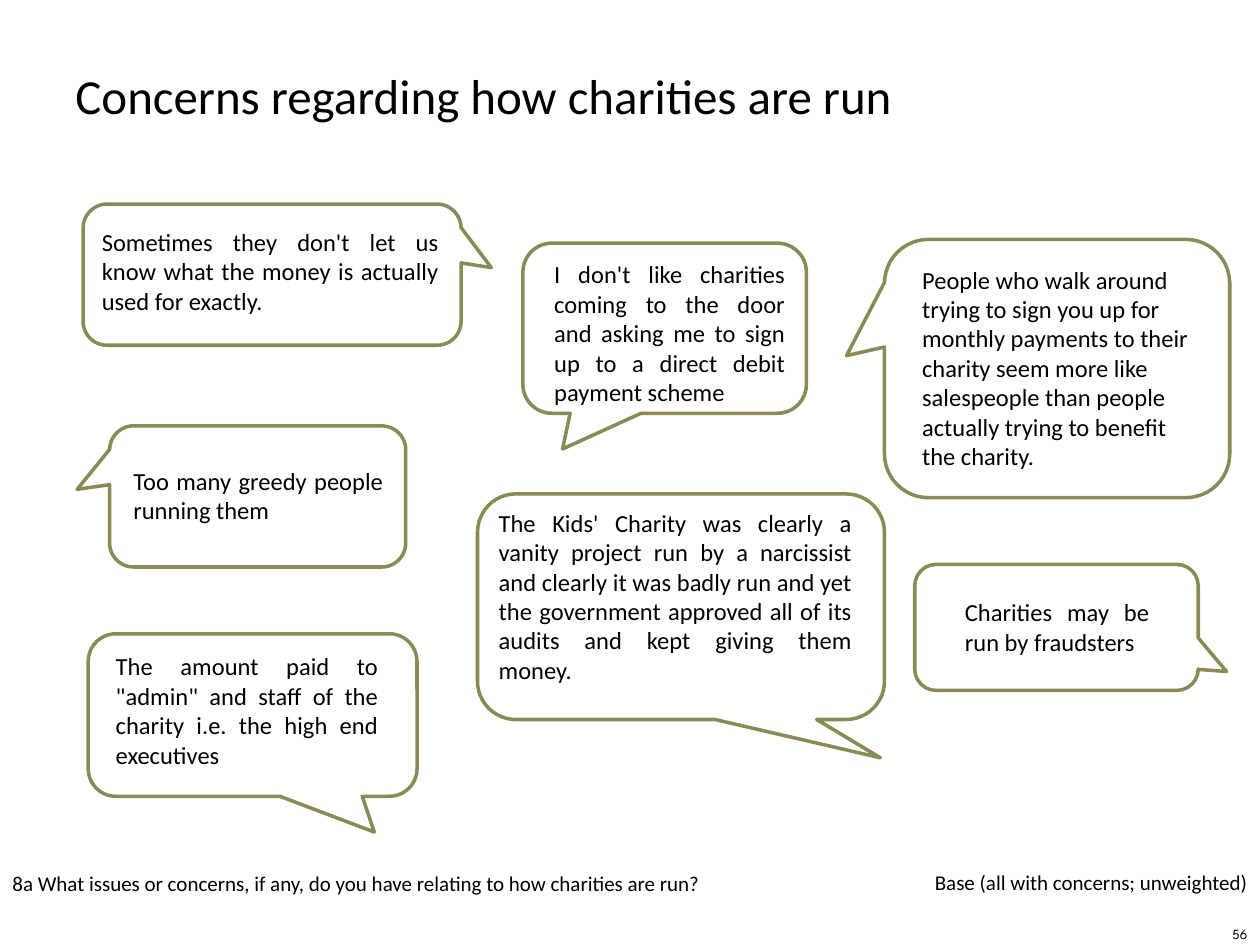
from pptx import Presentation
from pptx.dml.color import RGBColor
from pptx.enum.shapes import MSO_SHAPE
from pptx.enum.text import MSO_ANCHOR, PP_ALIGN
from pptx.util import Inches, Pt

CALLOUT = MSO_SHAPE.ROUNDED_RECTANGULAR_CALLOUT
LEFT, RIGHT, JUSTIFY = PP_ALIGN.LEFT, PP_ALIGN.RIGHT, PP_ALIGN.JUSTIFY
TOP, MIDDLE = MSO_ANCHOR.TOP, MSO_ANCHOR.MIDDLE
OLIVE, BLACK = "898A56", "000000"
CORNER = 0.17

# bubble box, pointer offset, text box, alignment, quote
QUOTES = [
    ((0.66, 1.62, 3, 1.12), (0.58, -0.05), (0.71, 1.75, 2.87, 0.81), JUSTIFY,
     "Sometimes they don't let us know what the money is actually used for exactly."),
    ((0.7, 5.03, 2.61, 1.29), (0.37, 0.72), (0.82, 5.12, 2.28, 1.04), JUSTIFY,
     "The amount paid to \"admin\" and staff of the charity i.e. the high end executives"),
    ((3.79, 3.92, 3.23, 1.79), (0.49, 0.67), (3.86, 3.98, 3, 1.51), JUSTIFY,
     "The Kids' Charity was clearly a vanity project run by a narcissist and clearly "
     "it was badly run and yet the government approved all of its audits and kept "
     "giving them money."),
    ((0.87, 3.38, 2.35, 1.12), (-0.61, -0.05), (0.96, 3.65, 2.18, 0.57), JUSTIFY,
     "Too many greedy people running them"),
    ((7.02, 1.9, 2.74, 2.05), (-0.61, -0.05), (7.22, 2.05, 2.41, 1.75), LEFT,
     "People who walk around trying to sign you up for monthly payments to their "
     "charity seem more like salespeople than people actually trying to benefit "
     "the charity."),
    ((4.15, 1.93, 2.25, 1.35), (-0.36, 0.71), (4.3, 2.01, 2.03, 1.28), JUSTIFY,
     "I don't like charities coming to the door and asking me to sign up to a "
     "direct debit payment scheme"),
    ((7.26, 4.48, 2.25, 1), (0.6, 0.35), (7.56, 4.69, 1.66, 0.57), JUSTIFY,
     "Charities may be run by fraudsters"),
]

# box, text, size, alignment, anchor, font
LABELS = [
    ((0.5, 0.13, 7.31, 1.25), "Concerns regarding how charities are run",
     28, LEFT, MIDDLE, "Calibri"),
    ((0, 6.86, 7.09, 0.3),
     "8a What issues or concerns, if any, do you have relating to how charities are run?",
     12, LEFT, TOP, "Calibri"),
    ((1.49, 6.85, 8.51, 0.3), "Base (all with concerns; unweighted)",
     12, RIGHT, TOP, "Calibri"),
    ((7.67, 7.21, 2.33, 0.4), "56", 8, RIGHT, MIDDLE, "League Spartan"),
]


def rgb(value):
    return RGBColor.from_string(value)


def add_bubble(s, box, pointer):
    sp = s.shapes.add_shape(CALLOUT, *map(Inches, box))
    sp.shadow.inherit = False
    sp.fill.background()
    sp.line.color.rgb = rgb(OLIVE)
    sp.line.width = Pt(2)
    for i, value in enumerate((*pointer, CORNER)):
        sp.adjustments[i] = value


def add_text(s, box, text, size, align, anchor=TOP, font="Calibri"):
    tf = s.shapes.add_textbox(*map(Inches, box)).text_frame
    tf.word_wrap = True
    tf.vertical_anchor = anchor
    p = tf.paragraphs[0]
    p.text = text
    p.alignment = align
    p.font.name = font
    p.font.size = Pt(size)
    p.font.color.rgb = rgb(BLACK)


def main():
    prs = Presentation()
    prs.slide_width, prs.slide_height = Inches(10), Inches(7.5)
    s = prs.slides.add_slide(prs.slide_layouts[6])
    for bubble, pointer, *_ in QUOTES:
        add_bubble(s, bubble, pointer)
    for _, _, box, align, quote in QUOTES:
        add_text(s, box, quote, 14, align)
    for label in LABELS:
        add_text(s, *label)
    prs.save("out.pptx")


if __name__ == "__main__":
    main()
